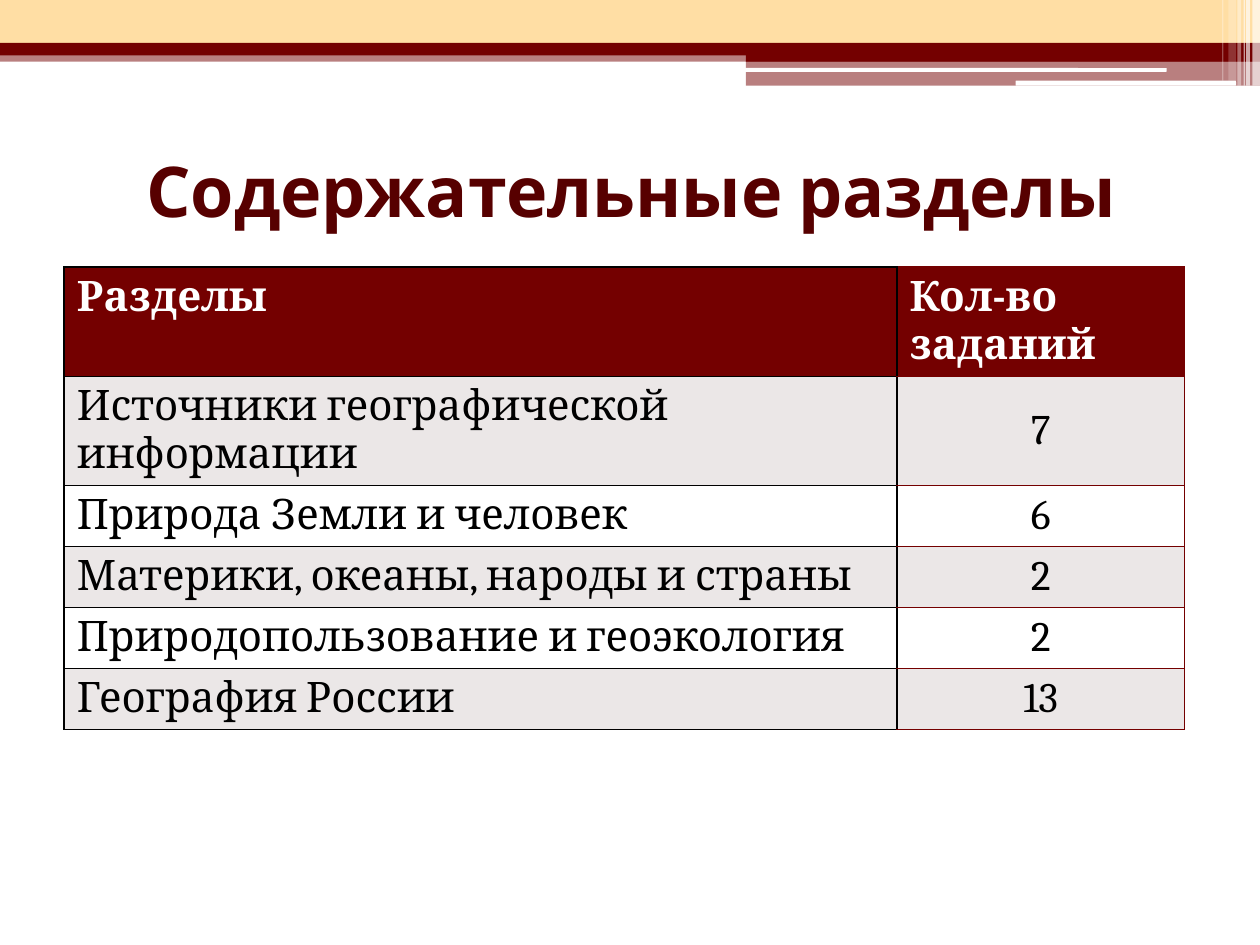
"""Build a slide with a striped header band, a title and a table of sections."""
from pptx import Presentation
from pptx import util as u
from pptx.dml import color as dml
from pptx.enum import shapes, text
from pptx.oxml import parse_xml
from pptx.oxml import ns

RED, WHITE, BLACK = "740000", "FFFFFF", "000000"
BARS = [
    (0, 0.4, 10, 0.09, RED, 50),
    (0, 0, 10, 0.34, "FFDEA4", 100),
    (0, 0.34, 10, 0.1, RED, 100),
    (5.92, 0.39, 4.08, 0.1, RED, 100),
    (5.92, 0.48, 4.08, 0.2, RED, 50),
]
PILLS = [(5.91, 0.54, 3.35, 0.03), (8.06, 0.64, 1.75, 0.04)]
STRIPES = [
    (9.94, 0.06, 0.68, 65),
    (9.89, 0.03, 0.68, 65),
    (9.87, 0.01, 0.68, 60),
    (9.82, 0.03, 0.68, 40),
    (9.75, 0.06, 0.64, 20),
    (9.7, 0.01, 0.64, 30),
]
ROWS = [
    ("Разделы", "Кол-во\nзаданий"),
    ("Источники географической информации", "7"),
    ("Природа Земли и человек", "6"),
    ("Материки, океаны, народы и страны", "2"),
    ("Природопользование и геоэкология", "2"),
    ("География России", "13"),
]


def rgb(code):
    return dml.RGBColor.from_string(code)


class Deck:
    def __init__(self):
        self.prs = Presentation()
        self.prs.slide_width = u.Inches(10)
        self.prs.slide_height = u.Inches(7.5)
        self.slide = self.prs.slides.add_slide(self.prs.slide_layouts[5])
        self.head = {"name": "Cabin", "size": u.Pt(40), "bold": True}
        self.body = {"name": "Cambria", "size": u.Pt(24), "bold": False}

    def style(self, frame, form, tint, align):
        for para in frame.paragraphs:
            para.alignment = align
            for run in para.runs:
                for key, val in form.items():
                    setattr(run.font, key, val)
                run.font.color.rgb = rgb(tint)

    def bar(self, x, y, w, h, tint, alpha=100, kind=shapes.MSO_SHAPE.RECTANGLE):
        box = self.slide.shapes.add_shape(kind, *map(u.Inches, (x, y, w, h)))
        box.shadow.inherit = False
        box.line.fill.background()
        box.fill.solid()
        box.fill.fore_color.rgb = rgb(tint)
        if alpha < 100:
            node = box.fill._xPr.find(".//" + ns.qn("a:srgbClr"))
            node.append(parse_xml(f'<a:alpha {ns.nsdecls("a")} val="{alpha * 1000}"/>'))

    def title(self, words, x, y, w, h):
        box = self.slide.shapes.title
        place = {"left": x, "top": y, "width": w, "height": h}
        for key, val in place.items():
            setattr(box, key, u.Inches(val))
        box.text_frame.text = words
        box.text_frame.vertical_anchor = text.MSO_ANCHOR.MIDDLE
        self.style(box.text_frame, self.head, "570000", text.PP_ALIGN.CENTER)

    def edge(self, cell, tints):
        props = cell._tc.get_or_add_tcPr()
        for side, tint in zip("LRTB", tints):
            props.append(parse_xml(
                f'<a:ln{side} {ns.nsdecls("a")} w="12700"><a:solidFill>'
                f'<a:srgbClr val="{tint}"/></a:solidFill></a:ln{side}>'))

    def table(self, rows, x, y, cols, step, high):
        size = map(u.Inches, (x, y, sum(cols), step * len(rows)))
        frame = self.slide.shapes.add_table(len(rows), len(cols), *size)
        grid = frame.table
        for col, wide in zip(grid.columns, cols):
            col.width = u.Inches(wide)
        for i, row in enumerate(rows):
            grid.rows[i].height = u.Inches(step)
            for j, words in enumerate(row):
                self.cell(grid.cell(i, j), words, i, j)
        frame.height = u.Inches(high)

    def cell(self, cell, words, i, j):
        cell.text = words
        mid = i > 0 and j > 0
        if mid:
            cell.vertical_anchor = text.MSO_ANCHOR.MIDDLE
        self.edge(cell, [BLACK] + [RED if j else BLACK] * 3)
        cell.fill.solid()
        cell.fill.fore_color.rgb = rgb(RED if i == 0 else "EBE7E7" if i % 2 else WHITE)
        form = {**self.body, "bold": i == 0}
        align = text.PP_ALIGN.CENTER if mid else text.PP_ALIGN.LEFT
        self.style(cell.text_frame, form, BLACK if i else WHITE, align)


def main():
    deck = Deck()
    for bar in BARS:
        deck.bar(*bar)
    for pill in PILLS:
        deck.bar(*pill, WHITE, kind=shapes.MSO_SHAPE.ROUNDED_RECTANGLE)
    for x, w, h, alpha in STRIPES:
        deck.bar(x, 0, w, h, WHITE, alpha)
    deck.title("Содержательные разделы", 0.51, 0.92, 9, 1.17)
    deck.table(ROWS, 0.51, 2.12, (6.61, 2.28), 0.41, 3.8)
    deck.prs.save("out.pptx")


if __name__ == "__main__":
    main()
